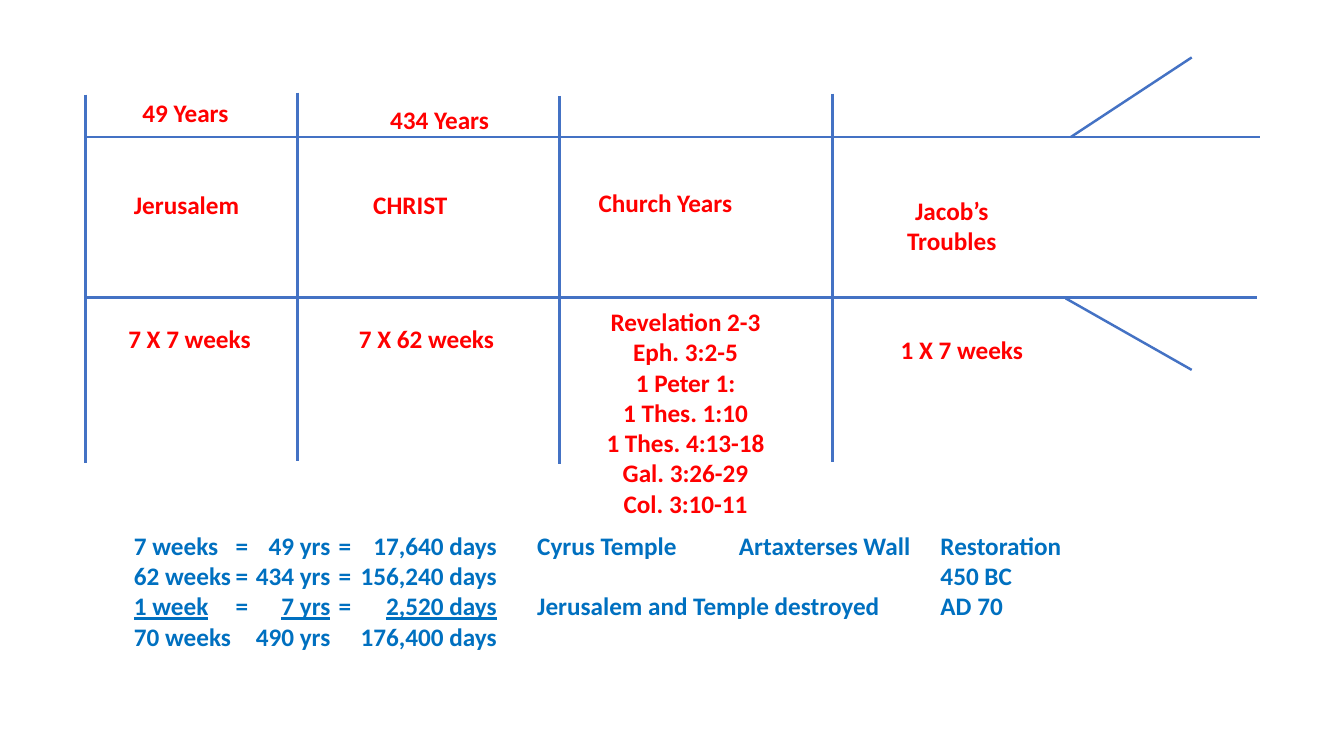
from dataclasses import dataclass

from lxml import etree
from pptx import Presentation
from pptx.dml.color import RGBColor
from pptx.enum.shapes import MSO_CONNECTOR
from pptx.enum.text import MSO_AUTO_SIZE, PP_ALIGN
from pptx.oxml.ns import qn
from pptx.slide import Slide
from pptx.text.text import TextFrame
from pptx.util import Inches, Pt

STRAIGHT = MSO_CONNECTOR.STRAIGHT
GROW = MSO_AUTO_SIZE.SHAPE_TO_FIT_TEXT
CENTER = PP_ALIGN.CENTER

LINE_BLUE = RGBColor(0x44, 0x72, 0xC4)
RED = RGBColor(0xFF, 0x00, 0x00)
SUM_BLUE = RGBColor(0x00, 0x70, 0xC0)
BLANK_LAYOUT = 6
RULE_LENGTH = 11.62
DIVIDER_HEIGHT = 3.65


@dataclass(frozen=True)
class Stroke:
    x1: float
    y1: float
    x2: float
    y2: float
    weight: float = 2


@dataclass(frozen=True)
class Label:
    left: float
    top: float
    lines: tuple[str, ...]
    width: float = 1.84
    height: float = 0.4


@dataclass(frozen=True)
class Part:
    text: str
    underline: bool = False


@dataclass(frozen=True)
class TabStop:
    position: float
    align: str = "l"


# Timeline: horizontal rules, period dividers, flared end
RULES = [Stroke(x, y, x + RULE_LENGTH, y)
         for x, y in ((0.88, 1.36), (0.86, 1.36), (0.85, 2.95))]
DIVIDERS = [Stroke(x, y, x, y + DIVIDER_HEIGHT)
            for x, y in ((0.85, 0.94), (2.95, 0.92), (5.55, 0.95), (8.26, 0.93))]
FLARES = [Stroke(10.62, 1.36, 11.82, 0.57, 1.75),
          Stroke(10.57, 2.96, 11.82, 3.67, 1.75)]

LABELS = [
    Label(0.96, 0.92, ("49 Years",), width=1.76),
    Label(3.61, 0.99, ("434 Years",), width=1.5),
    Label(3.31, 3.16, ("7 X 62 weeks",)),
    Label(0.96, 3.16, ("7 X 7 weeks",)),
    Label(5.68, 1.81, ("Church Years",)),
    Label(8.52, 1.89, ("Jacob’s Troubles",), height=0.71),
    Label(8.62, 3.27, ("1 X 7 weeks",)),
    Label(5.88, 2.99, ("Revelation 2-3", "Eph. 3:2-5", "1 Peter 1:", "1 Thes. 1:10",
                       "1 Thes. 4:13-18", "Gal. 3:26-29", "Col. 3:10-11"), height=2.22),
    Label(3.15, 1.83, ("CHRIST",)),
    Label(0.93, 1.83, ("Jerusalem",)),
]

# Sum of the weeks: equals signs and remarks left-aligned, amounts right-aligned
SUM_TABS = [TabStop(1.01), TabStop(1.95, "r"), TabStop(2.03), TabStop(3.6, "r"),
            TabStop(4), TabStop(6), TabStop(8)]
SUM_ROWS = [
    [Part("7 weeks\t=\t49 yrs\t=\t17,640 days\tCyrus Temple\tArtaxterses Wall\tRestoration")],
    [Part("62 weeks\t=\t434 yrs\t=\t156,240 days\t\t\t450 BC")],
    [Part("1 week\t", True), Part("= "), Part("\t7 yrs", True), Part("\t= "),
     Part("\t2,520 days", True), Part("\tJerusalem and Temple destroyed\tAD 70")],
    [Part("70 weeks\t\t490 yrs\t\t176,400 days")],
]


def draw_stroke(slide: Slide, stroke: Stroke) -> None:
    connector = slide.shapes.add_connector(
        STRAIGHT, Inches(stroke.x1), Inches(stroke.y1), Inches(stroke.x2), Inches(stroke.y2))
    connector.line.color.rgb = LINE_BLUE
    connector.line.width = Pt(stroke.weight)
    etree.SubElement(connector._element.spPr, qn("a:effectLst"))


def add_frame(slide: Slide, left: float, top: float, width: float, height: float) -> TextFrame:
    frame = slide.shapes.add_textbox(
        Inches(left), Inches(top), Inches(width), Inches(height)).text_frame
    frame.word_wrap = True
    frame.auto_size = GROW
    return frame


def fill_frame(frame: TextFrame, rows: list[list[Part]], color: RGBColor,
               align: PP_ALIGN | None = None, tabs: list[TabStop] | None = None) -> None:
    for index, row in enumerate(rows):
        paragraph = frame.add_paragraph() if index else frame.paragraphs[0]
        if align is not None:
            paragraph.alignment = align
        if tabs:
            tab_list = etree.SubElement(paragraph._p.get_or_add_pPr(), qn("a:tabLst"))
            for tab in tabs:
                etree.SubElement(tab_list, qn("a:tab"),
                                 pos=str(Inches(tab.position)), algn=tab.align)
        for part in row:
            run = paragraph.add_run()
            run.text = part.text
            run.font.name = "Calibri"
            run.font.size = Pt(18)
            run.font.bold = True
            run.font.underline = part.underline
            run.font.color.rgb = color


def main() -> None:
    deck = Presentation()
    deck.slide_width, deck.slide_height = Inches(13.33), Inches(7.5)
    slide = deck.slides.add_slide(deck.slide_layouts[BLANK_LAYOUT])

    for stroke in RULES + DIVIDERS + FLARES:
        draw_stroke(slide, stroke)

    for label in LABELS:
        frame = add_frame(slide, label.left, label.top, label.width, label.height)
        fill_frame(frame, [[Part(line)] for line in label.lines], RED, align=CENTER)

    weeks_sum = add_frame(slide, 1.23, 5.21, 10.5, 1.31)
    fill_frame(weeks_sum, SUM_ROWS, SUM_BLUE, tabs=SUM_TABS)

    deck.save("out.pptx")


if __name__ == "__main__":
    main()
